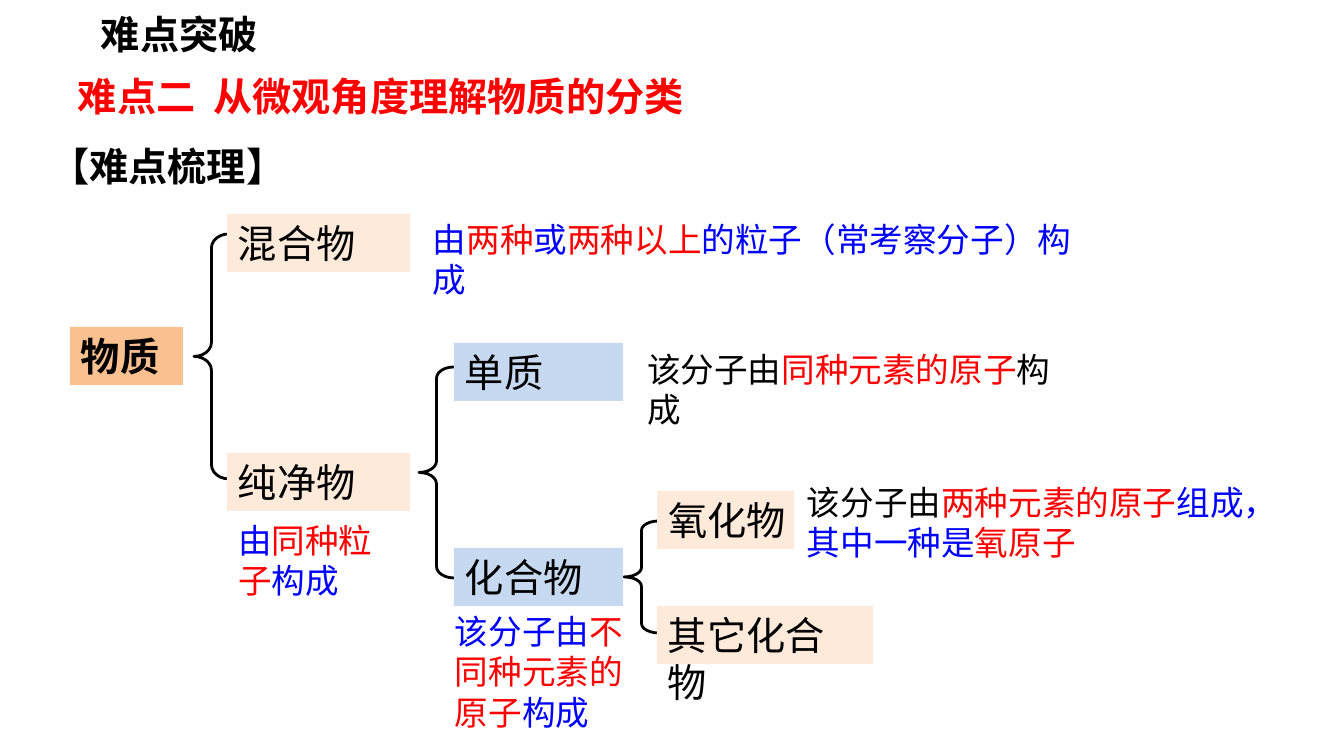
from dataclasses import dataclass

from lxml import etree
from pptx import Presentation
from pptx import util as u
from pptx.dml.color import RGBColor
from pptx.enum import shapes, text
from pptx.oxml.ns import qn

PX = 914400 / 134.4


@dataclass(frozen=True)
class Theme:
    font: str = "Noto Sans CJK SC"
    black: str = "000000"
    red: str = "FF0000"
    blue: str = "0000FF"
    root: str = "FAC090"
    peach: str = "FDEADA"
    sky: str = "C6D9F1"
    heading_size: int = 21
    note_size: int = 18
    brace_width: float = 1.5


THEME = Theme()
BLACK, RED, BLUE = THEME.black, THEME.red, THEME.blue
LABEL_HEIGHT = 58
BRACE_WIDTH = 35

# left, top, text, colour, line spacing, first-line indent, width, height
HEADINGS = [
    (90, 5, 296, LABEL_HEIGHT, "难点突破", BLACK, 1, 0),
    (28, 67, 737, LABEL_HEIGHT, "难点二  从微观角度理解物质的分类", RED, 1, 39),
    (39, 114, 259, 82, "【难点梳理】", BLACK, 1.5, 0),
]

# left, top, height, curl
BRACES = [(194, 234, 245, 0.4), (419, 367, 211, 0.326), (624, 521, 112, 0.267)]

# left, top, width, wording, fill, bold, wrap
CATEGORIES = [
    (70, 327, 113, "物质", THEME.root, True, True),
    (227, 214, 183, "混合物", THEME.peach, False, True),
    (227, 453, 183, "纯净物", THEME.peach, False, True),
    (454, 343, 169, "单质", THEME.sky, False, True),
    (454, 548, 169, "化合物", THEME.sky, False, True),
    (657, 491, 137, "氧化物", THEME.peach, False, False),
    (657, 606, 216, "其它化合物", THEME.peach, False, True),
]

# left, top, width, height, coloured phrases
NOTES = [
    (422, 214, 692, 51, [("由", BLUE), ("两种", RED), ("或", BLUE), ("两种以上", RED),
                         ("的粒子（常考察分子）构成", BLUE)]),
    (227, 515, 181, 91, [("由", BLUE), ("同种粒子", RED), ("构成", BLUE)]),
    (636, 344, 457, 51, [("该分子由", BLACK), ("同种元素的原子", RED), ("构成", BLACK)]),
    (444, 606, 191, 132, [("该分子由", BLUE), ("不同种元素的原子", RED), ("构成", BLUE)]),
    (796, 477, 501, 91, [("该分子由", BLACK), ("两种元素的原子", RED),
                         ("组成，其中一种是", BLUE), ("氧原子", RED)]),
]


def px(*lengths):
    return [u.Emu(round(length * PX)) for length in lengths]


def write(frame, phrases, size, bold=False, wrap=True):
    """Fill a text frame with one paragraph of coloured phrases."""
    frame.word_wrap = wrap
    frame.auto_size = text.MSO_AUTO_SIZE.NONE
    frame.vertical_anchor = text.MSO_ANCHOR.TOP
    frame.margin_left, frame.margin_right = px(11, 11)
    frame.margin_top, frame.margin_bottom = px(5, 5)
    paragraph = frame.paragraphs[0]
    paragraph.alignment = text.PP_ALIGN.LEFT
    for wording, color in phrases:
        run = paragraph.add_run()
        run.text = wording
        run.font.name = THEME.font
        run.font.size = u.Pt(size)
        run.font.bold = bold
        run.font.color.rgb = RGBColor.from_string(color)
        east_asian = etree.SubElement(run.font._element, qn("a:ea"))
        east_asian.set("typeface", THEME.font)
    return paragraph


def add_heading(slide, left, top, width, height, wording, color, spacing, indent):
    heading = slide.shapes.add_textbox(*px(left, top, width, height))
    paragraph = write(heading.text_frame, [(wording, color)], THEME.heading_size, bold=True)
    paragraph.line_spacing = spacing
    if indent:
        paragraph._p.get_or_add_pPr().set("indent", str(px(indent)[0]))


def add_category(slide, left, top, width, wording, fill, bold, wrap):
    category = slide.shapes.add_shape(
        shapes.MSO_SHAPE.RECTANGLE, *px(left, top, width, LABEL_HEIGHT))
    category.shadow.inherit = False
    category.fill.solid()
    category.fill.fore_color.rgb = RGBColor.from_string(fill)
    category.line.fill.background()
    write(category.text_frame, [(wording, BLACK)], THEME.heading_size, bold, wrap)


def add_brace(slide, left, top, height, curl):
    brace = slide.shapes.add_shape(
        shapes.MSO_SHAPE.LEFT_BRACE, *px(left, top, BRACE_WIDTH, height))
    brace.adjustments[0] = curl
    brace.adjustments[1] = 0.5
    brace.shadow.inherit = False
    brace.fill.background()
    brace.line.color.rgb = RGBColor.from_string(BLACK)
    brace.line.width = u.Pt(THEME.brace_width)


def add_note(slide, left, top, width, height, phrases):
    note = slide.shapes.add_textbox(*px(left, top, width, height))
    write(note.text_frame, phrases, THEME.note_size)


def main():
    deck = Presentation()
    deck.slide_width, deck.slide_height = px(1344, 756)
    slide = deck.slides.add_slide(deck.slide_layouts[6])
    for add, rows in ((add_heading, HEADINGS), (add_brace, BRACES),
                      (add_category, CATEGORIES), (add_note, NOTES)):
        for row in rows:
            add(slide, *row)
    deck.save("out.pptx")


if __name__ == "__main__":
    main()
